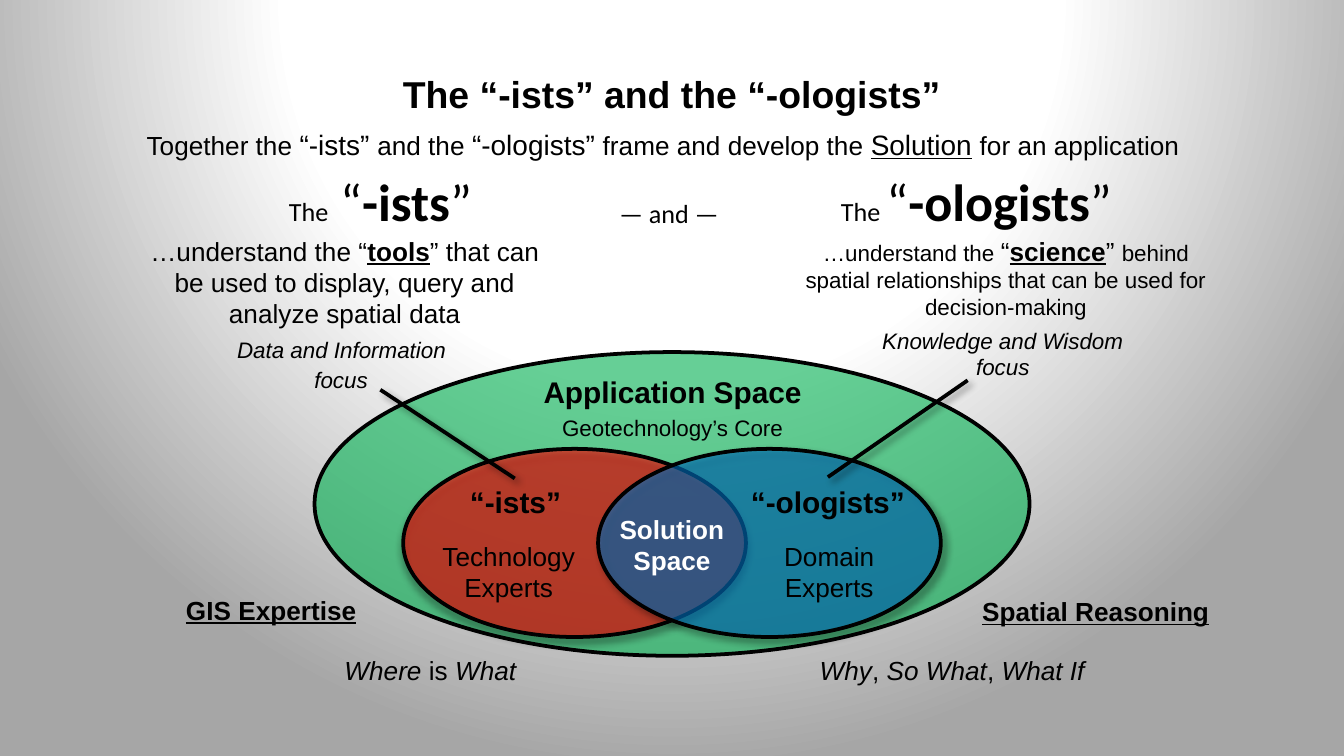
from dataclasses import dataclass
from typing import Optional

from lxml import etree
from pptx import Presentation
from pptx.dml.color import RGBColor
from pptx.enum import shapes, text
from pptx.oxml import ns
from pptx.util import Inches, Pt

BLACK = RGBColor(0x00, 0x00, 0x00)
WHITE = RGBColor(0xFF, 0xFF, 0xFF)
GREY = RGBColor(0xA6, 0xA6, 0xA6)
GREEN = RGBColor(0x00, 0xB0, 0x50)
RED = RGBColor(0xFF, 0x00, 0x00)
BLUE = RGBColor(0x00, 0x70, 0xC0)
LEFT, CENTER, RIGHT = text.PP_ALIGN.LEFT, text.PP_ALIGN.CENTER, text.PP_ALIGN.RIGHT


@dataclass
class Span:
    text: str
    size: Optional[float] = None
    bold: Optional[bool] = None
    italic: Optional[bool] = None
    underline: Optional[bool] = None


@dataclass
class Para:
    spans: list[Span]
    size: float = 14
    bold: Optional[bool] = None
    italic: Optional[bool] = None
    underline: Optional[bool] = None
    before: float = 0
    align: text.PP_ALIGN = CENTER
    font: str = "Arial"
    color: RGBColor = BLACK


@dataclass
class Label:
    at: tuple[float, float, float, float]
    paras: list[Para]
    wrap: bool = True


@dataclass
class Oval:
    at: tuple[float, float, float, float]
    color: RGBColor
    shadow_angle: Optional[int]
    labels: list[Label]


def plain(words: str, **style) -> Para:
    return Para([Span(words)], **style)


def heading(article: str, quote: str, name: str) -> list[Para]:
    return [Para([Span(article, 14), Span(quote), Span(name, bold=True), Span("”")],
                 size=28, font="Calibri")]


def experts(field: str) -> list[Para]:
    return [plain(field), plain("Experts")]


def write(frame, paras: list[Para]) -> None:
    for index, item in enumerate(paras):
        para = frame.paragraphs[0] if index == 0 else frame.add_paragraph()
        para.alignment = item.align
        if item.before:
            para.space_before = Pt(item.before)
        font = para.font
        font.name, font.size, font.color.rgb = item.font, Pt(item.size), item.color
        font.bold, font.italic, font.underline = item.bold, item.italic, item.underline
        for span in item.spans:
            run = para.add_run()
            run.text = span.text
            if span.size:
                run.font.size = Pt(span.size)
            run.font.bold, run.font.italic = span.bold, span.italic
            run.font.underline = span.underline


def add_label(slide, label: Label) -> None:
    box = slide.shapes.add_textbox(*map(Inches, label.at))
    box.text_frame.word_wrap = label.wrap
    write(box.text_frame, label.paras)


def outline(shape, shadow_angle: Optional[int]) -> None:
    """Draw a black line and, given an angle, a soft shadow."""
    shape.line.color.rgb = BLACK
    shape.line.width = Pt(2)
    effects = etree.SubElement(shape.element.spPr, ns.qn("a:effectLst"))
    if shadow_angle is not None:
        shadow = etree.SubElement(
            effects, ns.qn("a:outerShdw"), blurRad=str(Pt(4)), dist=str(Pt(3)),
            dir=str(shadow_angle * 60000), algn="ctr", rotWithShape="0")
        color = etree.SubElement(shadow, ns.qn("a:srgbClr"), val=str(BLACK))
        etree.SubElement(color, ns.qn("a:alpha"), val="40000")


def add_oval(slide, oval: Oval) -> None:
    shape = slide.shapes.add_shape(shapes.MSO_SHAPE.OVAL, *map(Inches, oval.at))
    shape.fill.solid()
    shape.fill.fore_color.rgb = oval.color
    color = shape.element.spPr.find(".//" + ns.qn("a:srgbClr"))
    etree.SubElement(color, ns.qn("a:alpha"), val="60000")
    outline(shape, oval.shadow_angle)
    for label in oval.labels:
        add_label(slide, label)


def add_pointer(slide, ends: tuple[float, float, float, float]) -> None:
    line = slide.shapes.add_connector(shapes.MSO_CONNECTOR.STRAIGHT, *map(Inches, ends))
    outline(line, 45)


def paint_background(slide) -> None:
    """Fill with a radial gradient centred above the slide."""
    fill = slide.background.fill
    fill.gradient()
    for stop, color, position in zip(fill.gradient_stops, (WHITE, GREY), (0.5, 1)):
        stop.color.rgb = color
        stop.position = position
    gradient = slide.element.find(".//" + ns.qn("a:gradFill"))
    gradient.remove(gradient.find(ns.qn("a:lin")))
    circle = etree.SubElement(gradient, ns.qn("a:path"), path="circle")
    etree.SubElement(circle, ns.qn("a:fillToRect"),
                     l="50000", t="-80000", r="50000", b="180000")


HEADINGS = [
    Label((0.49, 0.9, 8.94, 0.35), [Para([
        Span("Together the "), Span("“-ists” ", 15), Span("and the "),
        Span("“-ologists” ", 15), Span("frame and develop the "),
        Span("Solution", 15, underline=True), Span(" ", 15),
        Span("for an application ")])]),
    Label((0.99, 1.21, 3.68, 0.57), heading("The", " “", "-ists")),
    Label((5.56, 1.21, 3.41, 0.57), heading("The ", "“", "-ologists")),
    Label((4.38, 1.42, 1.24, 0.34), [plain("— and — ", font="Calibri")]),
]
CORNERS = [
    Label((6, 4.82, 2.29, 0.34), [Para([
        Span("Why", italic=True), Span(", "), Span("So What", italic=True),
        Span(", "), Span("What If", italic=True)], align=LEFT)]),
    Label((7.21, 4.38, 2.11, 0.34),
          [plain("Spatial Reasoning", bold=True, underline=True, align=LEFT)]),
    Label((2.13, 4.82, 1.81, 0.34), [Para([
        Span("Where", italic=True), Span(" is "), Span("What", italic=True)], align=RIGHT)]),
    Label((0.9, 4.37, 1.85, 0.35),
          [plain("GIS Expertise", bold=True, underline=True, align=RIGHT)]),
]
OVALS = [
    Oval((2.34, 2.62, 5.32, 2.26), GREEN, None, []),
    Oval((3, 3.34, 2.55, 1.4), RED, 90, [
        Label((3.19, 3.97, 1.19, 0.57), experts("Technology"), wrap=False),
        Label((3.14, 3.55, 1.39, 0.37), [plain("“-ists”", size=16, bold=True)])]),
    Oval((4.45, 3.34, 2.55, 1.4), BLUE, 45, [
        Label((5.73, 3.97, 0.88, 0.57), experts("Domain"), wrap=False),
        Label((5.46, 3.55, 1.4, 0.37), [plain("“-ologists”", size=16, bold=True)])]),
]
SPACES = [
    Label((4.51, 3.77, 0.98, 0.57),
          [plain(word, bold=True, color=WHITE) for word in ("Solution", "Space")], wrap=False),
    Label((3.93, 2.73, 2.15, 0.61),
          [plain("Application Space", size=16, bold=True),
           plain("Geotechnology’s Core", size=12, before=2.5)], wrap=False),
]
ROLES = [
    (Label((5.82, 1.7, 3.33, 1.19), [
        Para([Span("…understand the "), Span("“", 14),
              Span("science", 14, bold=True, underline=True), Span("” ", 14),
              Span("behind spatial relationships that can be used for decision-making")],
             size=12),
        plain("Knowledge and Wisdom ", size=12, italic=True, before=3.5),
        plain("focus ", size=12, italic=True)]),
     (7.2, 2.83, 6.16, 3.55)),
    (Label((0.89, 1.7, 3.35, 1.33), [
        Para([Span("…understand the “"), Span("tools", bold=True, underline=True),
              Span("” that can be used to display, query and analyze spatial data")]),
        plain("Data and Information ", size=12, italic=True, before=3.5),
        Para([Span("focus"), Span(" ", 14)], size=12, italic=True)]),
     (2.83, 2.9, 3.83, 3.56)),
]


def main() -> None:
    deck = Presentation()
    deck.slide_width = Inches(10)
    deck.slide_height = deck.slide_width * 9 // 16
    slide = deck.slides.add_slide(deck.slide_layouts.get_by_name("Title Only"))
    paint_background(slide)
    title = slide.shapes.title
    title.left, title.top, title.width, title.height = map(Inches, (0, 0.41, 10, 0.58))
    write(title.text_frame, [plain("The “-ists” and the “-ologists”", size=20, bold=True)])
    for label in HEADINGS + CORNERS:
        add_label(slide, label)
    for oval in OVALS:
        add_oval(slide, oval)
    for label in SPACES:
        add_label(slide, label)
    for label, ends in ROLES:
        add_label(slide, label)
        add_pointer(slide, ends)
    deck.save("out.pptx")


if __name__ == "__main__":
    main()
